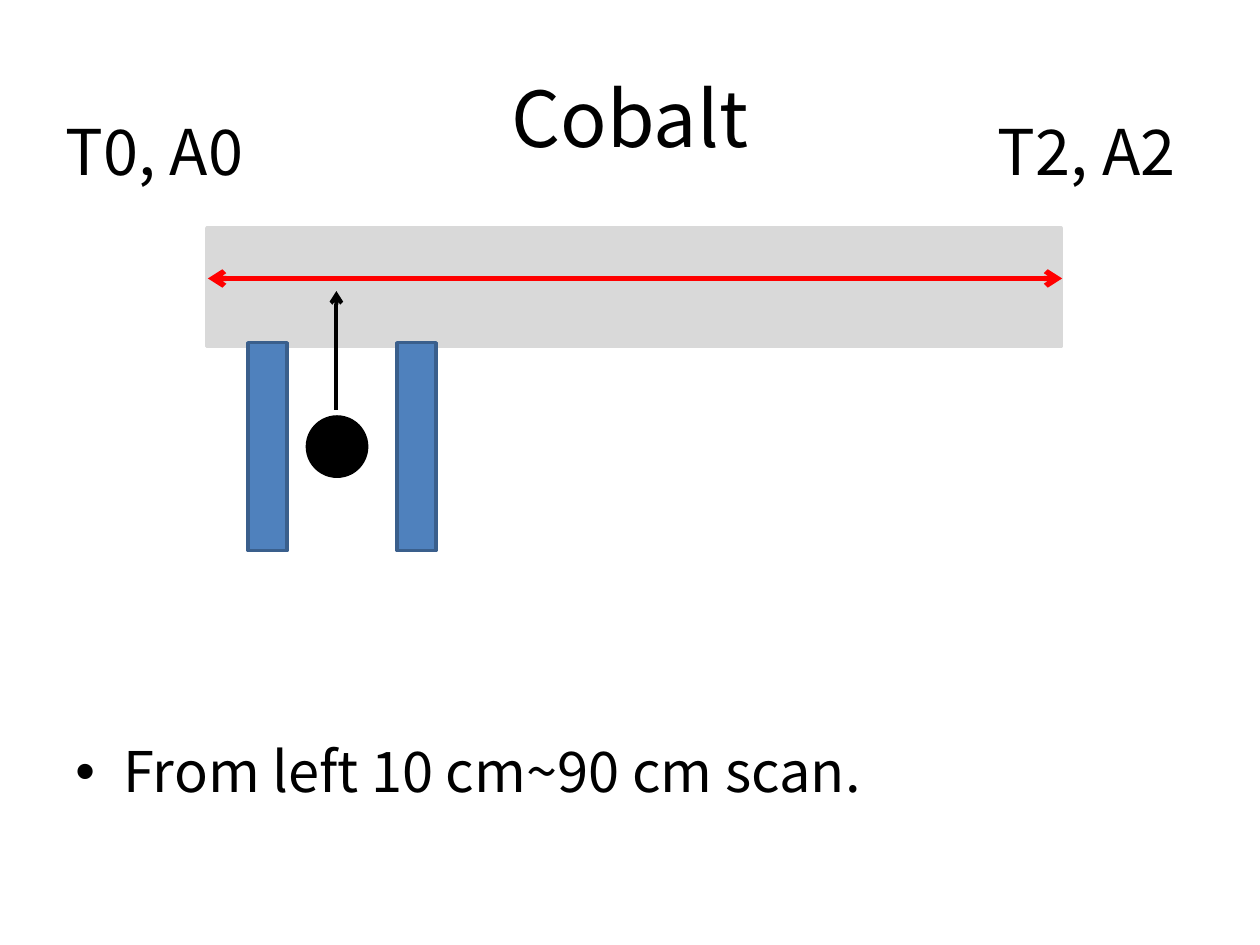
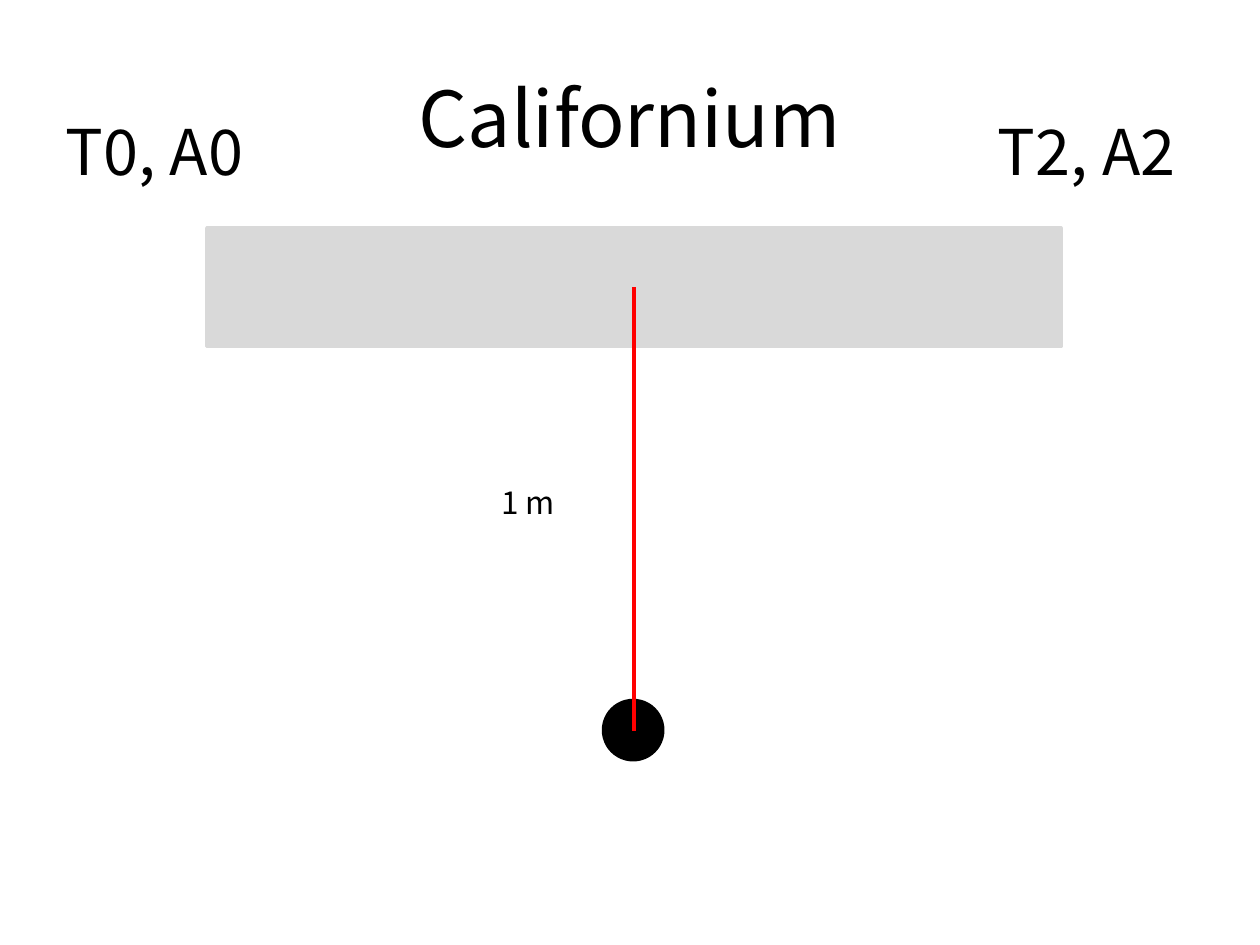
from lxml.etree import SubElement
from pptx import Presentation
from pptx.dml.color import RGBColor
from pptx.enum.shapes import MSO_CONNECTOR, MSO_SHAPE
from pptx.enum.text import MSO_ANCHOR, PP_ALIGN
from pptx.oxml.ns import qn
from pptx.util import Inches, Pt

COLORS = {"ink": "000000", "bar": "D9D9D9", "path": "FF0000",
          "plate": "4F81BD", "plate edge": "3A5F8C"}
FONT = "Noto Sans CJK KR"

deck = Presentation()
deck.slide_width, deck.slide_height = Inches(10), Inches(7.5)
CELL = deck.slide_width / 100  # square grid: 100 columns by 75 rows


def write(holder, text, size, align=PP_ALIGN.CENTER, anchor=MSO_ANCHOR.MIDDLE,
          bullet=None):
    frame = holder.text_frame
    frame.word_wrap = True
    frame.vertical_anchor = anchor
    paragraph = frame.paragraphs[0]
    paragraph.alignment = align
    run = paragraph.add_run()
    run.text = text
    run.font.size = Pt(size)
    run.font.name = FONT
    run.font.color.rgb = RGBColor.from_string(COLORS["ink"])
    properties = run._r.get_or_add_rPr()
    SubElement(properties, qn("a:ea")).set("typeface", FONT)
    if bullet:
        settings = paragraph._p.get_or_add_pPr()
        settings.set("marL", str(Inches(0.38)))
        settings.set("indent", str(-Inches(0.38)))
        SubElement(settings, qn("a:buFont")).set("typeface", "Arial")
        SubElement(settings, qn("a:buChar")).set("char", bullet)
        paragraph.space_before = Pt(size * 0.2)


def draw(slide, kind, spot, line, width=2, fill=None, arrow=False):
    """Add a filled shape at left, top, width, height, or a line between two points."""
    lengths = [round(value * CELL) for value in spot]
    if fill:
        item = slide.shapes.add_shape(kind, *lengths)
        item.shadow.inherit = False
        item.fill.solid()
        item.fill.fore_color.rgb = RGBColor.from_string(COLORS[fill])
    else:
        item = slide.shapes.add_connector(kind, *lengths)
    item.line.color.rgb = RGBColor.from_string(COLORS[line])
    item.line.width = Pt(width)
    if arrow:
        SubElement(item.line._get_or_add_ln(), qn("a:tailEnd")).set("type", "arrow")
    if not fill:
        SubElement(item._element.spPr, qn("a:effectLst"))


# Shared by both slides: title, detector bar and the labels of its two ends
slides = []
for source_name in ("Cobalt", "Californium"):
    slide = deck.slides.add_slide(deck.slide_layouts[5])
    title = slide.shapes.title
    title.left, title.top, title.width, title.height = (
        round(value * CELL) for value in (5, 3, 90, 12.5))
    write(title, source_name, size=44)
    draw(slide, MSO_SHAPE.RECTANGLE, (16.4, 18.1, 67.8, 9.4), line="bar", fill="bar")
    slides.append(slide)
cobalt, californium = slides

# Each slide's texts: slide, text, place, format
end_labels = [(slide, text, (left, 7.6, 18.9, 8.7), {"size": 36})
              for slide in slides
              for text, left in (("T0, A0", 2.8), ("T2, A2", 76.8))]
notes = [
    (cobalt, "From left 10 cm~90 cm scan.", (5, 58, 90, 9),
     {"size": 32, "align": PP_ALIGN.LEFT, "anchor": MSO_ANCHOR.TOP, "bullet": "•"}),
    (californium, "1 m", (36.8, 36.7, 10.2, 6.3), {"size": 18}),
]
for slide, text, place, style in end_labels + notes:
    box = slide.shapes.add_textbox(*(round(value * CELL) for value in place))
    write(box, text, **style)

# The radioactive source
DOT = 4.7
for slide, left, top in ((cobalt, 24.4, 33.1), (californium, 47.9, 55.6)):
    draw(slide, MSO_SHAPE.OVAL, (left, top, DOT, DOT), line="ink", fill="ink")

# Cobalt: beam between two plates, scanned along the bar
beam_x, scan_y = 26.7, 22.1
draw(cobalt, MSO_CONNECTOR.STRAIGHT, (beam_x, 32.5, beam_x, 23.1),
     line="ink", width=2.25, arrow=True)
for bar_end in (84.3, 16.5):
    draw(cobalt, MSO_CONNECTOR.STRAIGHT, (beam_x, scan_y, bar_end, scan_y),
         line="path", width=3, arrow=True)
for plate_left in (19.7, 31.5):
    draw(cobalt, MSO_SHAPE.RECTANGLE, (plate_left, 27.2, 3.1, 16.5),
         line="plate edge", fill="plate")

# Californium: distance from the bar to the source
draw(californium, MSO_CONNECTOR.STRAIGHT, (50.3, 22.8, 50.3, 58), line="path")

deck.save("out.pptx")
